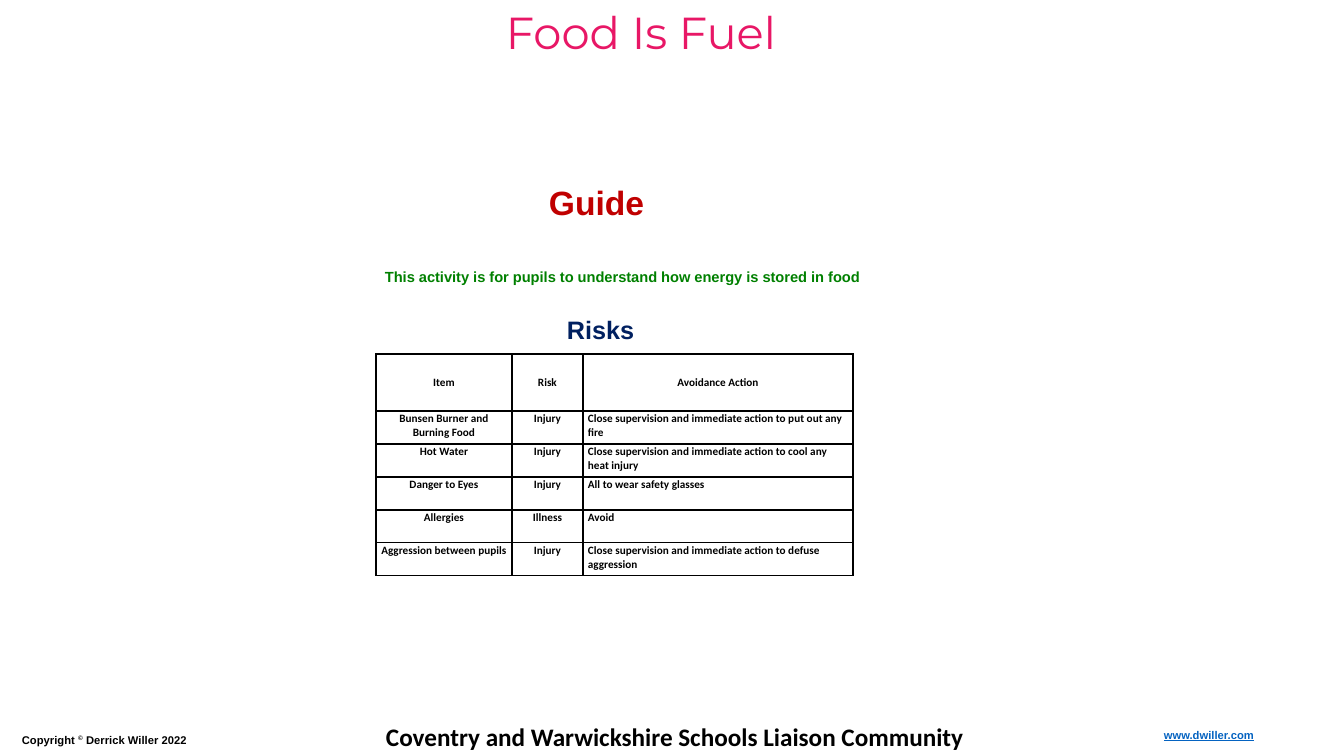
from lxml import etree
from pptx import Presentation
from pptx.dml.color import RGBColor
from pptx.enum.text import MSO_ANCHOR, MSO_AUTO_SIZE, PP_ALIGN
from pptx.oxml.ns import qn
from pptx.util import Pt

LEFT, MID, RIGHT = PP_ALIGN.LEFT, PP_ALIGN.CENTER, PP_ALIGN.RIGHT
TOP, CENTRE = MSO_ANCHOR.TOP, MSO_ANCHOR.MIDDLE
GROW = MSO_AUTO_SIZE.SHAPE_TO_FIT_TEXT

BLACK = RGBColor(0x00, 0x00, 0x00)
PINK = RGBColor(0xE8, 0x17, 0x66)
RED = RGBColor(0xC0, 0x00, 0x00)
GREEN = RGBColor(0x00, 0x80, 0x00)
NAVY = RGBColor(0x00, 0x20, 0x60)
BLUE = RGBColor(0x05, 0x63, 0xC1)

WIDE, HIGH = 1344, 756

TEXTS = [
    ((376, 716, 603, 40), False, LEFT, "Calibri", 18, True, BLACK,
     ["Coventry and Warwickshire Schools Liaison Community"]),
    ((12, 728, 570, 24), True, LEFT, "Arial", 8, True, BLACK,
     ["Copyright ", "©", " Derrick Willer 2022"]),
    ((1129, 723, 135, 24), True, RIGHT, "Arial", 8, True, BLUE,
     ["www.dwiller.com"]),
    ((368, 0, 546, 64), True, MID, "Montserrat", 32, False, PINK,
     ["Food Is Fuel"]),
    ((539, 177, 116, 50), False, LEFT, "Arial", 24, True, RED, ["Guide"]),
    ((375, 263, 673, 28), True, LEFT, "Arial", 10.5, True, GREEN,
     ["This activity is for pupils to understand how energy is stored in food"]),
    ((557, 309, 89, 40), False, LEFT, "Arial", 18, True, NAVY, ["Risks"]),
]

RISKS = [
    ("Item", "Risk", "Avoidance Action"),
    ("Bunsen Burner and Burning Food", "Injury",
     "Close supervision and immediate action to put out any fire"),
    ("Hot Water", "Injury",
     "Close supervision and immediate action to cool any heat injury"),
    ("Danger to Eyes", "Injury", "All to wear safety glasses"),
    ("Allergies", "Illness", "Avoid"),
    ("Aggression between pupils", "Injury",
     "Close supervision and immediate action to defuse aggression"),
]
ORIGIN = (376, 354)
COLS = [136, 71, 270]
ROWS = [57] + [33] * (len(RISKS) - 1)


def px(n):
    return round(n * 914400 / 100.8)


def write(para, text, face, size, bold, color):
    run = para.add_run()
    run.text = text
    font = run.font
    font.name, font.size, font.bold = face, Pt(size), bold
    font.color.rgb = color
    if text == "©":
        run._r.get_or_add_rPr().set("baseline", "30000")
    if text.startswith("www"):
        font.underline = True


def add_text(slide, area, wrap, align, face, size, bold, color, parts):
    frame = slide.shapes.add_textbox(*map(px, area)).text_frame
    frame.word_wrap = wrap
    frame.auto_size = GROW
    para = frame.paragraphs[0]
    para.alignment = align
    for part in parts:
        write(para, part, face, size, bold, color)


def edge(cell):
    props = cell._tc.get_or_add_tcPr()
    for spot, side in enumerate(("lnL", "lnR", "lnT", "lnB")):
        line = etree.Element(qn(f"a:{side}"), w=str(Pt(1)))
        fill = etree.SubElement(line, qn("a:solidFill"))
        etree.SubElement(fill, qn("a:srgbClr"), val=str(BLACK))
        props.insert(spot, line)


def add_risks(slide):
    area = (*ORIGIN, sum(COLS), sum(ROWS))
    table = slide.shapes.add_table(
        len(ROWS), len(COLS), *map(px, area)).table
    table.first_row = table.horz_banding = False
    for col, width in zip(table.columns, COLS):
        col.width = px(width)
    for row, height in zip(table.rows, ROWS):
        row.height = px(height)
    for r, risk in enumerate(RISKS):
        for c, text in enumerate(risk):
            cell = table.cell(r, c)
            cell.fill.background()
            cell.margin_left = cell.margin_right = px(5)
            cell.margin_top, cell.margin_bottom = px(1), 0
            cell.vertical_anchor = TOP if r else CENTRE
            para = cell.text_frame.paragraphs[0]
            para.alignment = LEFT if r and c == 2 else MID
            write(para, text, "Calibri", 8, True, BLACK)
            edge(cell)


def main():
    deck = Presentation()
    deck.slide_width, deck.slide_height = px(WIDE), px(HIGH)
    slide = deck.slides.add_slide(deck.slide_layouts[6])
    for text in TEXTS:
        add_text(slide, *text)
    add_risks(slide)
    deck.save("out.pptx")


if __name__ == "__main__":
    main()
